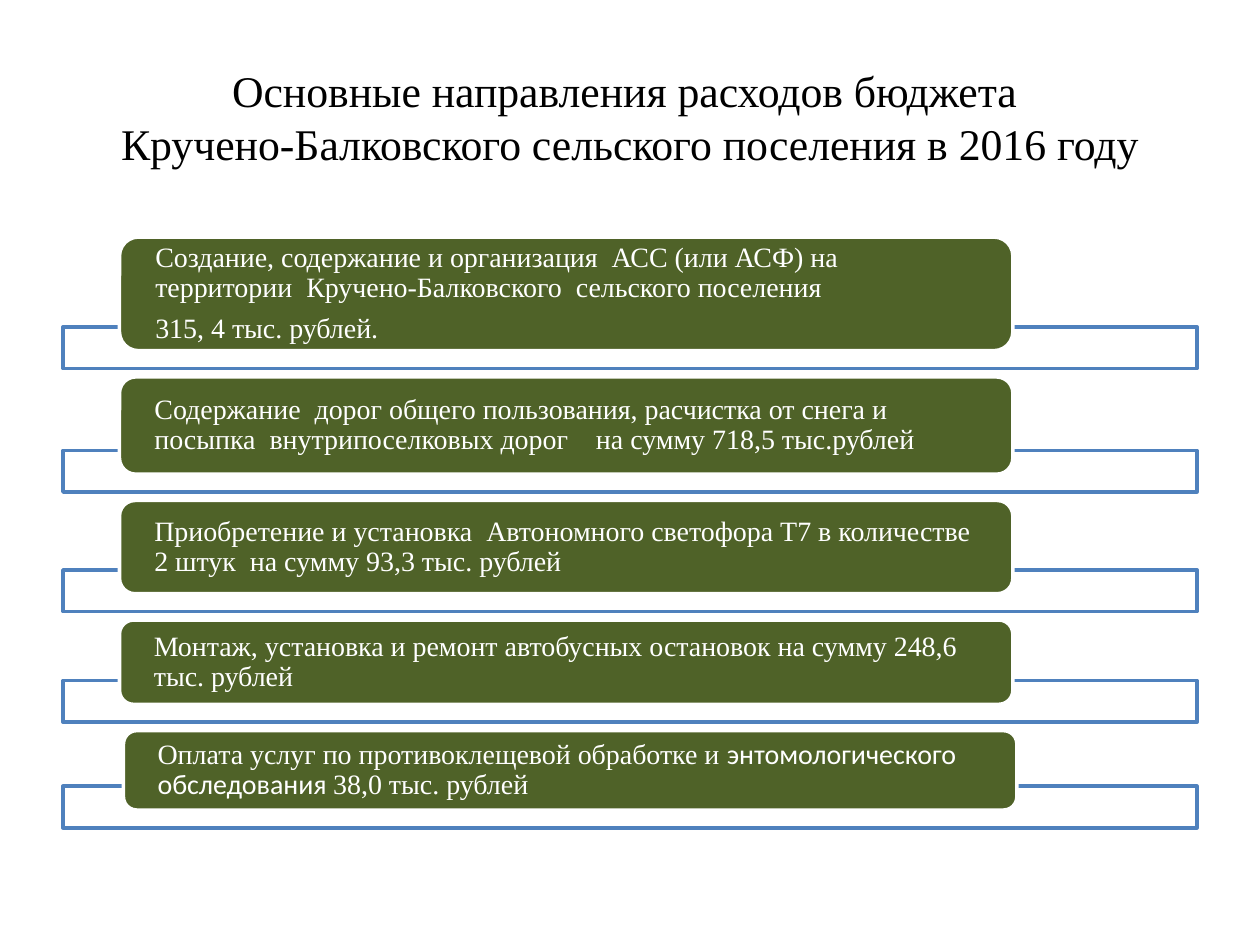
"""Build the slide on the main budget expenses of the settlement."""
from lxml import etree
from pptx import Presentation
from pptx import util as u
from pptx.dml.color import RGBColor
from pptx.enum import shapes, text
from pptx.oxml.ns import qn

SERIF, SANS = "Times New Roman", "Calibri"
TITLE = ("Основные направления расходов бюджета \v"
         "Кручено-Балковского сельского поселения в 2016 году")
ITEMS = [
    (2.29, 2.41, [
        [("Создание, содержание и организация  АСС (или АСФ) на  территории  "
          "Кручено-Балковского  сельского поселения", SERIF)],
        [("315, 4 тыс. рублей.", SERIF)]]),
    (1.96, 2.41, [
        [("Содержание  дорог общего пользования, расчистка от снега и посыпка  "
          "внутрипоселковых дорог    на сумму 718,5 тыс.рублей", SERIF)]]),
    (1.88, 2.41, [
        [("Приобретение и установка  Автономного светофора Т7 в количестве "
          "2 штук  на сумму 93,3 тыс. рублей", SERIF)]]),
    (1.7, 2.41, [
        [("Монтаж, установка и ремонт автобусных остановок на сумму 248,6 "
          "тыс. рублей", SERIF)]]),
    (1.6, 2.49, [
        [("Оплата услуг по противоклещевой обработке и ", SERIF),
         ("энтомологического обследования ", SANS),
         ("38,0 тыс. рублей", SERIF)]]),
]
TOP, GAP, LAP = 4.78, 0.53, 0.48
LEFT, WIDE, THIN, BODY = 1.27, 22.86, 0.84, 18.01
FRAME = {"word_wrap": True, "vertical_anchor": text.MSO_ANCHOR.MIDDLE}
INSET = {"margin_left": u.Cm(0.61), "margin_right": u.Cm(0.61),
         "margin_top": 0, "margin_bottom": 0}
PARA = {"alignment": text.PP_ALIGN.LEFT, "line_spacing": 0.9,
        "space_after": u.Pt(5.6)}


def apply(obj, vals):
    """Set each attribute named in vals."""
    for name, val in vals.items():
        setattr(obj, name, val)


def tint(code):
    """Turn a hex string into a colour."""
    return RGBColor.from_string(code)


def style(run, face, size, code):
    """Format one run of text."""
    apply(run.font, {"name": face, "size": u.Pt(size)})
    run.font.color.rgb = tint(code)


def draw(slide, kind, box, fill, line):
    """Add a filled and outlined shape."""
    shape = slide.shapes.add_shape(kind, *map(u.Cm, box))
    shape.shadow.inherit = False
    shape.fill.solid()
    shape.fill.fore_color.rgb = tint(fill)
    shape.line.color.rgb = tint(line)
    shape.line.width = u.Pt(2)
    return shape


def head(slide):
    """Add the title."""
    frame = slide.shapes.add_textbox(
        *map(u.Cm, (LEFT, 0.76, WIDE, 3.18))).text_frame
    apply(frame, FRAME)
    para = frame.paragraphs[0]
    para.text = TITLE
    para.alignment = text.PP_ALIGN.CENTER
    for run in para.runs:
        style(run, SERIF, 25, "000000")


def write(frame, paras):
    """Fill a frame with paragraphs of runs."""
    apply(frame, {**FRAME, **INSET})
    for num, runs in enumerate(paras):
        para = frame.add_paragraph() if num else frame.paragraphs[0]
        apply(para, PARA)
        for words, face in runs:
            run = para.add_run()
            run.text = words
            style(run, face, 16, "FFFFFF")


def main():
    """Lay out the slide and save it."""
    deck = Presentation()
    apply(deck, {"slide_width": u.Cm(25.4), "slide_height": u.Cm(19.05)})
    slide = deck.slides.add_slide(deck.slide_layouts[6])
    head(slide)
    top = TOP
    for high, left, paras in ITEMS:
        bar = draw(slide, shapes.MSO_SHAPE.RECTANGLE,
                   (LEFT, top + high - LAP, WIDE, THIN), "FFFFFF", "4F81BD")
        white = bar.fill._xPr.find(".//" + qn("a:srgbClr"))
        etree.SubElement(white, qn("a:alpha"), val="90000")
        pill = draw(slide, shapes.MSO_SHAPE.ROUNDED_RECTANGLE,
                    (left, top, BODY, high), "4F6228", "FFFFFF")
        write(pill.text_frame, paras)
        top += high + GAP
    deck.save("out.pptx")


if __name__ == "__main__":
    main()
